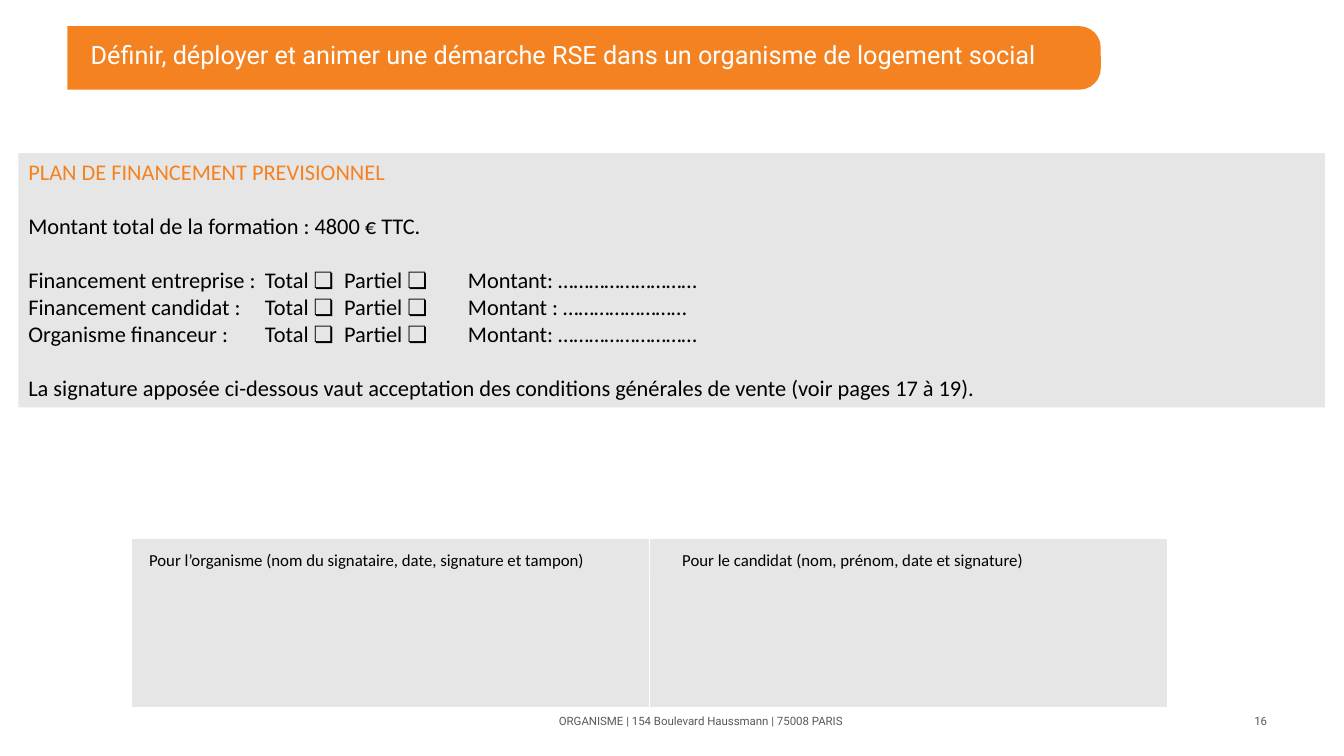
from lxml import etree
from pptx import Presentation
from pptx.dml.color import RGBColor
from pptx.enum.shapes import MSO_SHAPE
from pptx.enum.text import MSO_ANCHOR, PP_ALIGN
from pptx.oxml.ns import qn
from pptx.util import Pt

LEFT, CENTER, RIGHT = PP_ALIGN.LEFT, PP_ALIGN.CENTER, PP_ALIGN.RIGHT
TOP, MIDDLE = MSO_ANCHOR.TOP, MSO_ANCHOR.MIDDLE
RECT, ROUNDED = MSO_SHAPE.RECTANGLE, MSO_SHAPE.ROUNDED_RECTANGLE
ORANGE = RGBColor(0xF5, 0x82, 0x21)
GREY = RGBColor(0xE7, 0xE6, 0xE6)
DARK = RGBColor(0x58, 0x59, 0x5B)
BLACK = RGBColor(0, 0, 0)
WHITE = RGBColor(255, 255, 255)

# Content
TITLE = "Définir, déployer et animer une démarche RSE dans un organisme de logement social"
PLAN = [  # text, starts a new group
    ("PLAN DE FINANCEMENT PREVISIONNEL", False),
    ("Montant total de la formation : 4800 € TTC.", True),
    ("Financement entreprise :\tTotal ❏\tPartiel ❏\tMontant: ………………………", True),
    ("Financement candidat :\tTotal ❏\tPartiel ❏\tMontant : ……………………", False),
    ("Organisme financeur :\tTotal ❏\tPartiel ❏\tMontant: ………………………", False),
    ("La signature apposée ci-dessous vaut acceptation des conditions générales "
     "de vente (voir pages 17 à 19).", True),
]
PLAN_TABS = (169, 225.5, 314)
GROUP_GAP = 19.5
SIGNATURES = [  # text, left, width
    ("Pour l’organisme (nom du signataire, date, signature et tampon)", 99.4, 364.3),
    ("Pour le candidat (nom, prénom, date et signature)", 480.2, 298.8),
]
FOOTERS = [  # text, left, width, alignment
    ("ORGANISME | 154 Boulevard Haussmann | 75008 PARIS", 318.2, 365, CENTER),
    ("16", 696.2, 216, RIGHT),
]

prs = Presentation()
prs.slide_width, prs.slide_height = Pt(960), Pt(540)
s = prs.slides.add_slide(prs.slide_layouts[5])


def add_block(kind, x, y, w, h, fill):
    sp = s.shapes.add_shape(kind, Pt(x), Pt(y), Pt(w), Pt(h))
    sp.shadow.inherit = False
    sp.fill.solid()
    sp.fill.fore_color.rgb = fill
    sp.line.fill.background()
    return sp


def write(sp, lines, size, font, color, align=LEFT, anchor=TOP):
    tf = sp.text_frame
    tf.text = "\n".join(lines)
    tf.word_wrap = True
    tf.vertical_anchor = anchor
    for p in tf.paragraphs:
        p.alignment = align
        for r in p.runs:
            r.font.size, r.font.name = Pt(size), font
            r.font.color.rgb = color
    return tf.paragraphs


def add_tabs(p, stops):
    tabs = etree.SubElement(p._p.get_or_add_pPr(), qn("a:tabLst"))
    for stop in stops:
        etree.SubElement(tabs, qn("a:tab"), pos=str(Pt(stop)), algn="l")


def set_borders(cell, color, widths):
    tc_pr = cell._tc.get_or_add_tcPr()
    for i, (side, width) in enumerate(widths.items()):
        ln = etree.Element(qn("a:ln" + side), w=str(Pt(width)))
        fill = etree.SubElement(ln, qn("a:solidFill"))
        etree.SubElement(fill, qn("a:srgbClr"), val=str(color))
        tc_pr.insert(i, ln)


# Title band, squared off on the left by the white margin
bar = add_block(ROUNDED, 6.5, 18.7, 779.8, 45.4, ORANGE)
bar.adjustments[0] = 0.336
add_block(RECT, 0, 10.8, 48.2, 63.4, WHITE)

title = s.shapes.title
title.left, title.top, title.width, title.height = Pt(57.6), Pt(18.7), Pt(712.8), Pt(43.2)
write(title, [TITLE], 18, "Roboto", WHITE, anchor=MIDDLE)[0].line_spacing = 0.9
s.shapes._spTree.append(title._element)

# Footer and page number
for text, x, w, align in FOOTERS:
    sp = s.shapes.add_textbox(Pt(x), Pt(500.4), Pt(w), Pt(28.8))
    write(sp, [text], 8.2, "Roboto", DARK, align, MIDDLE)

# Financing plan
panel = add_block(RECT, 13.2, 109.4, 933.1, 181.7, GREY)
paragraphs = write(panel, [text for text, _ in PLAN], 16, "Calibri", BLACK)
paragraphs[0].runs[0].font.color.rgb = ORANGE
for p, (text, new_group) in zip(paragraphs, PLAN):
    if new_group:
        p.space_before = Pt(GROUP_GAP)
    if "\t" in text:
        add_tabs(p, PLAN_TABS)

# Signature table
table = s.shapes.add_table(1, 2, Pt(93.6), Pt(384.5), Pt(740.2), Pt(121.7)).table
table.first_row = table.horz_banding = False
for cell in table.iter_cells():
    cell.fill.solid()
    cell.fill.fore_color.rgb = GREY
    set_borders(cell, WHITE, {"L": 1, "R": 1, "T": 1, "B": 3})

# Signature labels
for text, x, w in SIGNATURES:
    write(add_block(RECT, x, 388.8, w, 21.8, GREY), [text], 12, "Calibri", BLACK)

prs.save("out.pptx")
